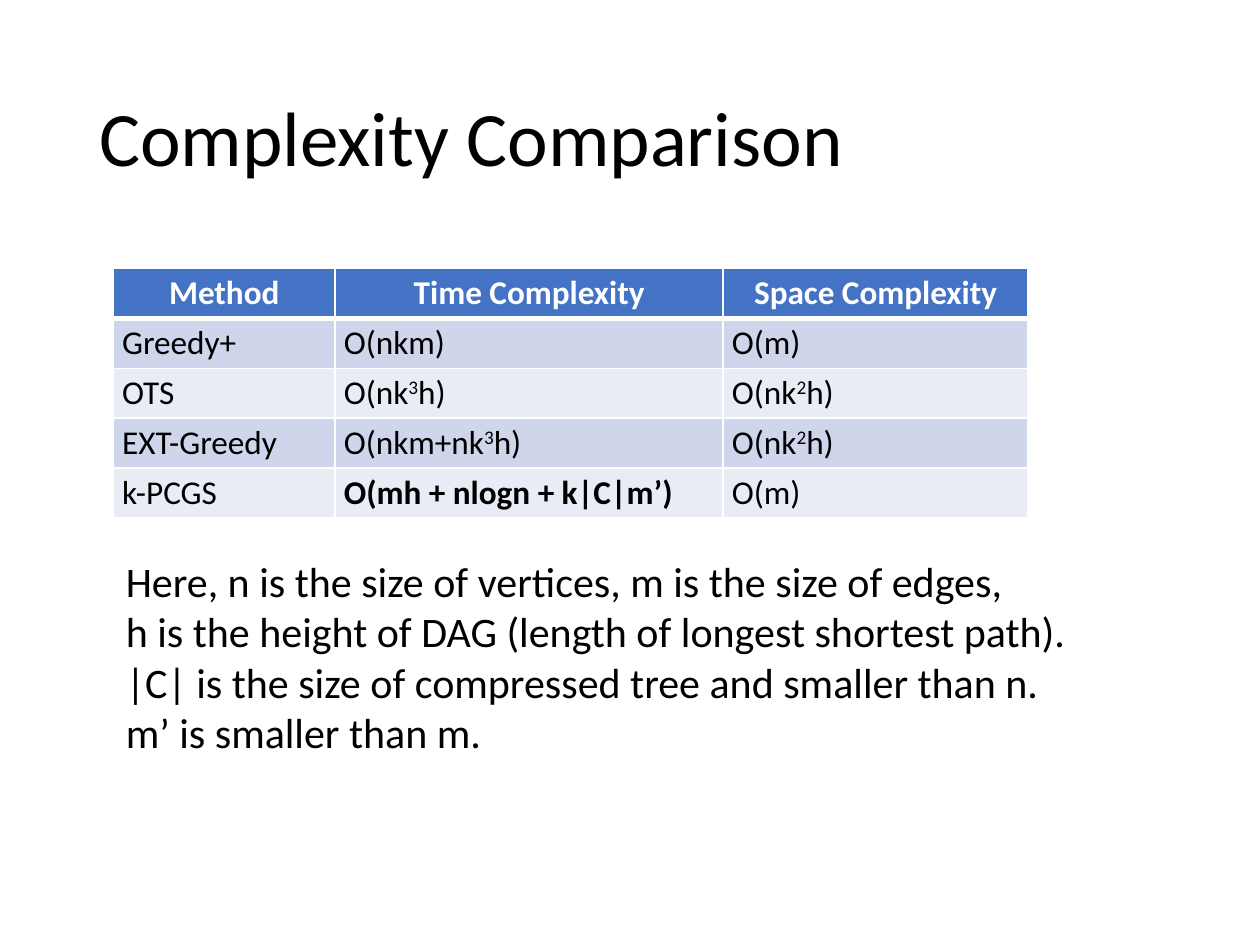
"""Build a slide that compares the complexity of four methods."""
from lxml import etree
from pptx import Presentation, util as u
from pptx.dml import color
from pptx.enum import text
from pptx.oxml import ns

COLORS = {"ink": "000000", "paper": "FFFFFF", "header": "4472C4",
          "odd": "CFD5EA", "even": "E9EBF5"}
FONT = "Calibri"
WIDTH, HEIGHT = 10, 7.5
MARGIN = 0.09 * WIDTH
TITLE = "Complexity Comparison"
HEADERS = ["Method", "Time Complexity", "Space Complexity"]
BEST = "O(mh + nlogn + k|C|m’)"
ROWS = [
    ["Greedy+", "O(nkm)", "O(m)"],
    ["OTS", "O(nk^3^h)", "O(nk^2^h)"],
    ["EXT-Greedy", "O(nkm+nk^3^h)", "O(nk^2^h)"],
    ["k-PCGS", BEST, "O(m)"],
]
COLUMNS = [1.76, 3.08, 2.42]
ROW_HEIGHT = 0.39
NOTES = [
    "Here, n is the size of vertices, m is the size of edges,",
    "h is the height of DAG (length of longest shortest path).",
    "|C| is the size of compressed tree and smaller than n.",
    "m’ is smaller than m.",
]


def rgb(name):
    return color.RGBColor.from_string(COLORS[name])


def write(para, content, size, ink="ink", bold=False):
    """Add runs to a paragraph, raising what stands between carets."""
    for index, part in enumerate(content.split("^")):
        span = para.add_run()
        span.text = part
        span.font.name, span.font.size, span.font.bold = FONT, u.Pt(size), bold
        span.font.color.rgb = rgb(ink)
        if index % 2:
            span.font._element.set("baseline", "30000")


def add_box(page, left, top, width, height, lines, size):
    box = page.shapes.add_textbox(*map(u.Inches, (left, top, width, height)))
    frame = box.text_frame
    for index, line in enumerate(lines):
        para = frame.add_paragraph() if index else frame.paragraphs[0]
        write(para, line, size)
    return frame


def add_borders(cell, bottom):
    """Draw white borders, the bottom one with its own width in points."""
    props = cell._tc.get_or_add_tcPr()
    for side, points in (("L", 1), ("R", 1), ("T", 1), ("B", bottom)):
        line = etree.SubElement(props, ns.qn(f"a:ln{side}"), w=str(u.Pt(points)))
        fill = etree.SubElement(line, ns.qn("a:solidFill"))
        etree.SubElement(fill, ns.qn("a:srgbClr"), val=COLORS["paper"])


def add_comparison(page):
    rows = [HEADERS] + ROWS
    frame = page.shapes.add_table(
        len(rows), len(COLUMNS), u.Inches(MARGIN), u.Inches(2.13),
        u.Inches(sum(COLUMNS)), u.Inches(ROW_HEIGHT * len(rows)))
    table = frame.table
    for column, width in zip(table.columns, COLUMNS):
        column.width = u.Inches(width)
    for r, row in enumerate(rows):
        table.rows[r].height = u.Inches(ROW_HEIGHT)
        header = r == 0
        for c, content in enumerate(row):
            cell = table.cell(r, c)
            cell.margin_left = cell.margin_right = u.Inches(0.07)
            cell.margin_top = cell.margin_bottom = u.Inches(0.04)
            add_borders(cell, 3 if header else 1)
            cell.fill.solid()
            cell.fill.fore_color.rgb = rgb("header" if header else "odd" if r % 2 else "even")
            para = cell.text_frame.paragraphs[0]
            para.alignment = text.PP_ALIGN.CENTER if header else text.PP_ALIGN.LEFT
            write(para, content, 19, "paper" if header else "ink", header or content == BEST)


def main():
    deck = Presentation()
    deck.slide_width, deck.slide_height = u.Inches(WIDTH), u.Inches(HEIGHT)
    page = deck.slides.add_slide(deck.slide_layouts[6])
    title = add_box(page, 0.69, 0.4, 8.62, 1.45, [TITLE], 44)
    title.word_wrap = True
    title.vertical_anchor = text.MSO_ANCHOR.MIDDLE
    title.paragraphs[0].line_spacing = 0.9
    add_comparison(page)
    notes = add_box(page, MARGIN, 4.36, 7.72, 1.72, NOTES, 24)
    notes.word_wrap = False
    notes.auto_size = text.MSO_AUTO_SIZE.SHAPE_TO_FIT_TEXT
    deck.save("out.pptx")


if __name__ == "__main__":
    main()
